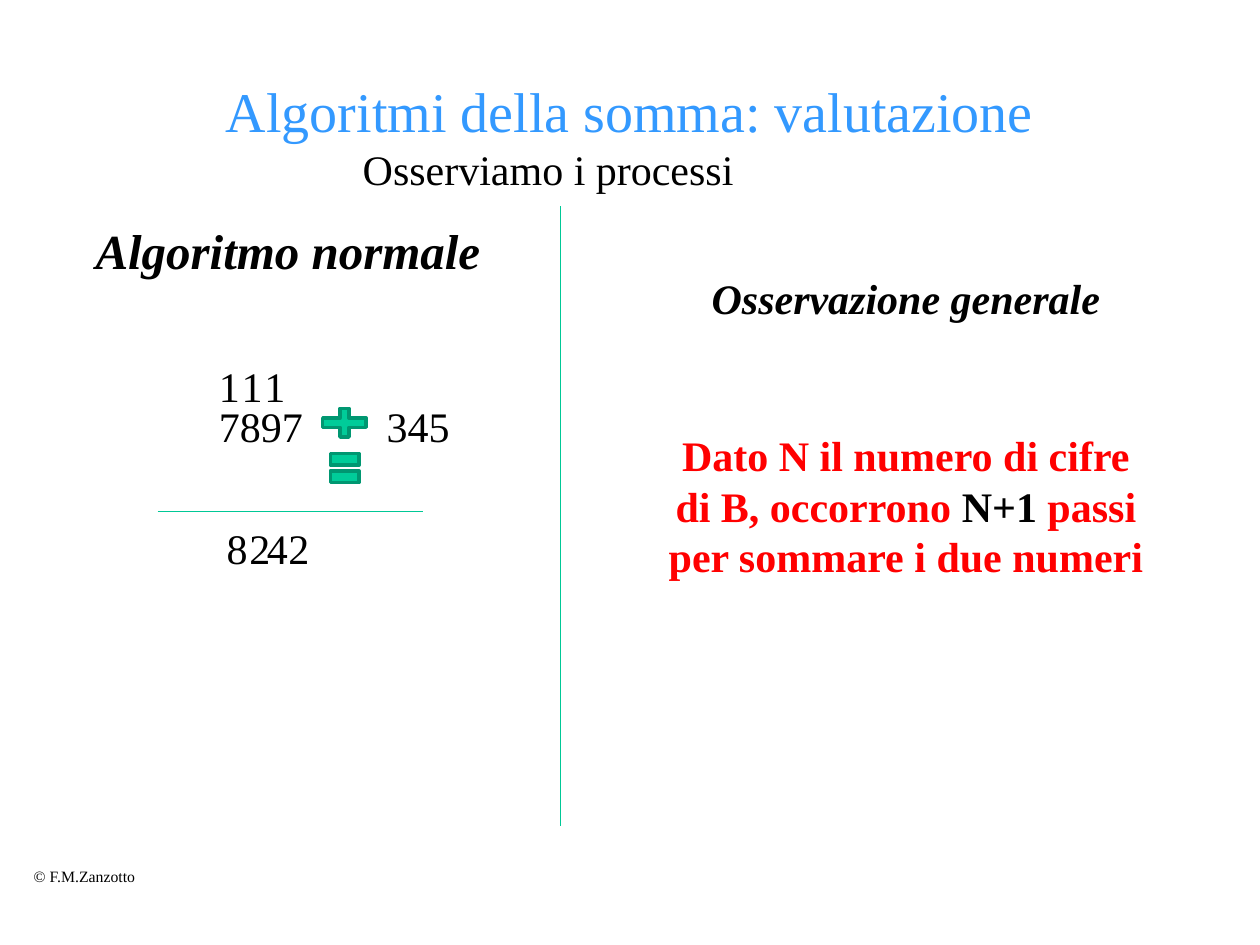
import pptx
import pptx.dml.color
import pptx.enum.shapes
import pptx.enum.text
import pptx.oxml.ns
import pptx.util
from lxml import etree

Pt = pptx.util.Pt
Align = pptx.enum.text.PP_ALIGN
AutoSize = pptx.enum.text.MSO_AUTO_SIZE
Shape = pptx.enum.shapes.MSO_SHAPE


def color(value):
    return pptx.dml.color.RGBColor.from_string(value)


class SlideBuilder:
    font_name = "Times New Roman"
    black, red, title_blue = "000000", "FF0000", "3399FF"
    line_green, fill_green, outline_green = "00C896", "00CC99", "009771"

    def __init__(self, slide):
        self.slide = slide

    def add_run(self, paragraph, text, size, hex_color, bold=False, italic=False):
        run = paragraph.add_run()
        run.text = text
        font = run.font
        font.name, font.size = self.font_name, Pt(size)
        font.bold, font.italic = bold, italic
        font.color.rgb = color(hex_color)

    def title(self, text, left, top, width, height):
        shape = self.slide.shapes.title
        shape.left, shape.top = Pt(left), Pt(top)
        shape.width, shape.height = Pt(width), Pt(height)
        frame = shape.text_frame
        frame.vertical_anchor = pptx.enum.text.MSO_ANCHOR.MIDDLE
        paragraph = frame.paragraphs[0]
        paragraph.alignment = Align.CENTER
        self.add_run(paragraph, text, 32, self.title_blue)

    def text(self, runs, left, top, width, height, size=24, wrap=False,
             grow=True, bold=False, italic=False):
        """Wrapped boxes are centred, the others keep to the left."""
        shape = self.slide.shapes.add_textbox(Pt(left), Pt(top), Pt(width), Pt(height))
        frame = shape.text_frame
        frame.word_wrap = wrap
        frame.auto_size = AutoSize.SHAPE_TO_FIT_TEXT if grow else AutoSize.NONE
        paragraph = frame.paragraphs[0]
        paragraph.alignment = Align.CENTER if wrap else Align.LEFT
        for text, hex_color in runs:
            self.add_run(paragraph, text, size, hex_color, bold, italic)
        return frame

    def label(self, text, left, top, width, height, **style):
        return self.text([(text, self.black)], left, top, width, height, **style)

    def line(self, x1, y1, x2, y2):
        connector = self.slide.shapes.add_connector(
            pptx.enum.shapes.MSO_CONNECTOR.STRAIGHT, Pt(x1), Pt(y1), Pt(x2), Pt(y2))
        connector.line.color.rgb = color(self.line_green)
        connector.line.width = Pt(0.75)
        properties = connector._element.spPr
        etree.SubElement(properties, pptx.oxml.ns.qn("a:effectLst"))

    def symbol(self, kind, left, top, width, height):
        shape = self.slide.shapes.add_shape(kind, Pt(left), Pt(top), Pt(width), Pt(height))
        shape.shadow.inherit = False
        shape.fill.solid()
        shape.fill.fore_color.rgb = color(self.fill_green)
        shape.line.color.rgb = color(self.outline_green)
        shape.line.width = Pt(2)


def main():
    presentation = pptx.Presentation()
    presentation.slide_width, presentation.slide_height = Pt(720), Pt(540)
    slide = presentation.slides.add_slide(presentation.slide_layouts[5])
    builder = SlideBuilder(slide)

    # Footer, title and subtitle
    builder.label("© F.M.Zanzotto", 12.2, 492, 73.4, 18, size=9)
    builder.title("Algoritmi della somma: valutazione", 54, 36, 612, 54)
    builder.label("Osserviamo i processi", 200.2, 78.5, 228.2, 36)

    # Two halves with their headings
    builder.line(320.4, 118, 320.4, 472.3)
    heading = builder.label("Algoritmo normale", 11.5, 118, 306, 372.2, size=28,
                            wrap=True, grow=False, bold=True, italic=True)
    heading.margin_top = Pt(8)
    builder.label("Osservazione generale", 371.5, 152, 292.3, 36,
                  wrap=True, bold=True, italic=True)

    # General observation
    builder.text([("Dato N il numero di cifre di B, occorrono ", builder.red),
                  ("N+1", builder.black),
                  (" passi per sommare i due numeri", builder.red)],
                 371.5, 242, 292.3, 94.3, wrap=True, bold=True)

    # Addends, operators and sum line
    builder.label("7897", 118, 225.4, 63.4, 36.7)
    builder.label("345", 213.8, 225.4, 51.1, 36.7)
    builder.symbol(Shape.MATH_PLUS, 180, 230.4, 33.8, 22.3)
    builder.symbol(Shape.MATH_EQUAL, 185.8, 253.4, 22.3, 28.1)
    builder.line(90, 292.3, 242, 292.3)

    # Carries above the addends, result digits below the line
    digit_rows = [
        (202.3, "111", (118, 131, 144)),
        (295.2, "8242", (122.4, 135.4, 145.4, 157.7)),
    ]
    for top, digits, lefts in digit_rows:
        for digit, left in zip(digits, lefts):
            builder.label(digit, left, top, 26.6, 36.7)

    presentation.save("out.pptx")


if __name__ == "__main__":
    main()
